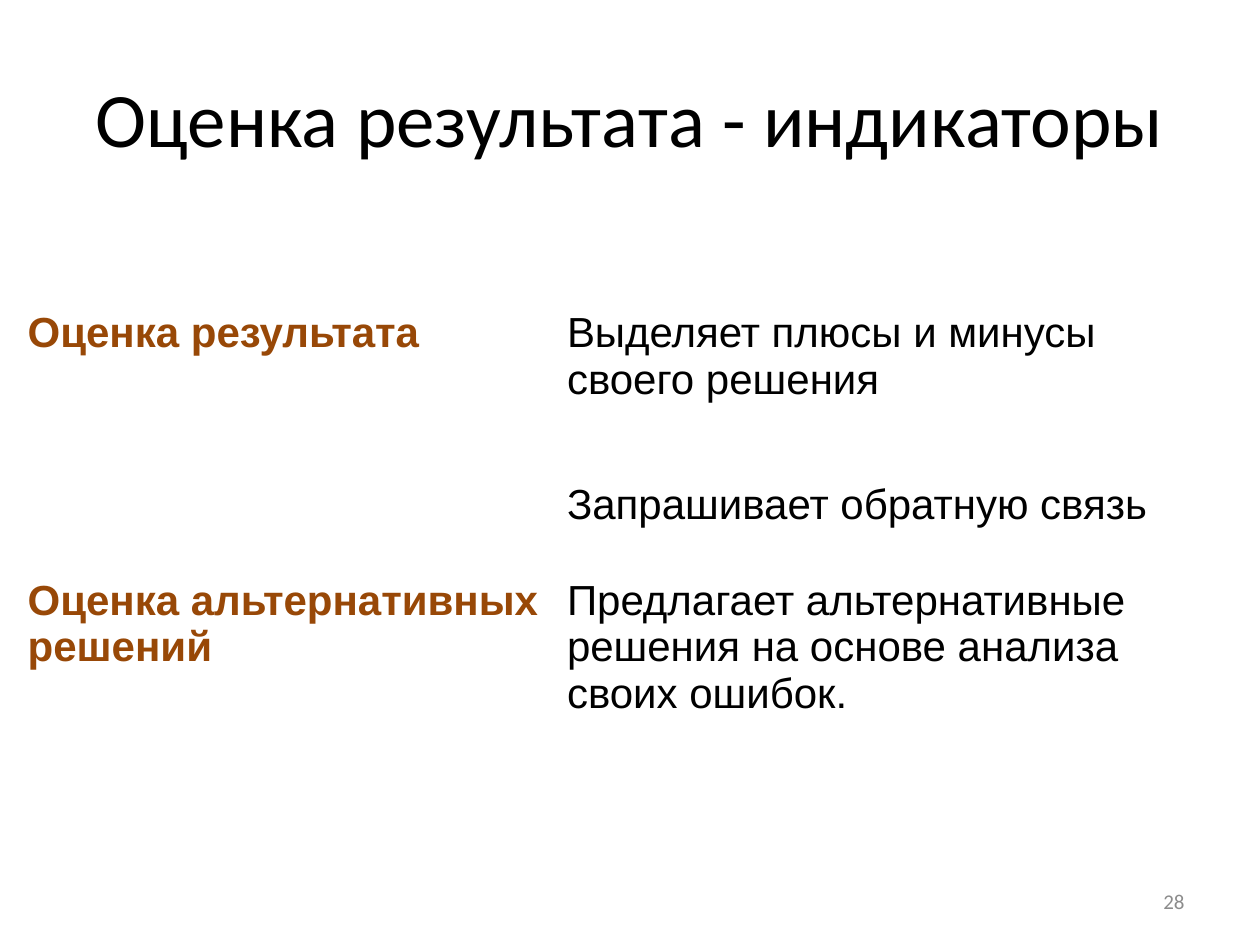
"""Build the slide of result assessment indicators."""
import pptx
import pptx.util
import pptx.dml.color
import pptx.enum.text

TITLE = "Оценка результата - индикаторы"
NUMBER = "28"
ROWS = [
    ("Оценка результата", "Выделяет плюсы и минусы своего решения"),
    ("", "Запрашивает обратную связь"),
    ("Оценка альтернативных решений",
     "Предлагает альтернативные решения на основе анализа своих ошибок."),
]
COL_WIDTHS = (4.28, 5.33)
ROW_HEIGHTS = (1.36, 0.76, 1.97)
COLORS = {"text": "000000", "heading": "984807", "number": "8C8C8C"}

inches = pptx.util.Inches
ALIGN = pptx.enum.text.PP_ALIGN
MIDDLE = pptx.enum.text.MSO_ANCHOR.MIDDLE


def write(tf, text, size, name, color, align=ALIGN.LEFT, bold=False):
    tf.word_wrap = True
    p = tf.paragraphs[0]
    p.text, p.alignment = text, align
    p.font.size, p.font.name, p.font.bold = pptx.util.Pt(size), name, bold
    p.font.color.rgb = pptx.dml.color.RGBColor.from_string(COLORS[color])


def add_indicators(s):
    table = s.shapes.add_table(
        len(ROWS), len(COL_WIDTHS), inches(0.12), inches(2.41),
        inches(sum(COL_WIDTHS)), inches(sum(ROW_HEIGHTS))).table
    table.first_row = table.horz_banding = False
    for column, width in zip(table.columns, COL_WIDTHS):
        column.width = inches(width)
    for row, height, texts in zip(table.rows, ROW_HEIGHTS, ROWS):
        row.height = inches(height)
        for cell, text, color in zip(row.cells, texts, ("heading", "text")):
            cell.fill.background()
            if text:
                write(cell.text_frame, text, 24, "Arial", color,
                      bold=color == "heading")


def main():
    prs = pptx.Presentation()
    prs.slide_width, prs.slide_height = inches(10), inches(7.5)
    s = prs.slides.add_slide(prs.slide_layouts[5])

    title = s.shapes.title
    title.left, title.top = inches(0.5), inches(0.3)
    title.width, title.height = inches(9), inches(1.25)
    title.text_frame.vertical_anchor = MIDDLE
    write(title.text_frame, TITLE, 44, "Calibri", "text", ALIGN.CENTER)

    add_indicators(s)

    number = s.shapes.add_textbox(
        inches(7.17), inches(6.95), inches(2.33), inches(0.4))
    number.text_frame.vertical_anchor = MIDDLE
    write(number.text_frame, NUMBER, 12, "Calibri", "number", ALIGN.RIGHT)

    prs.save("out.pptx")


if __name__ == "__main__":
    main()
